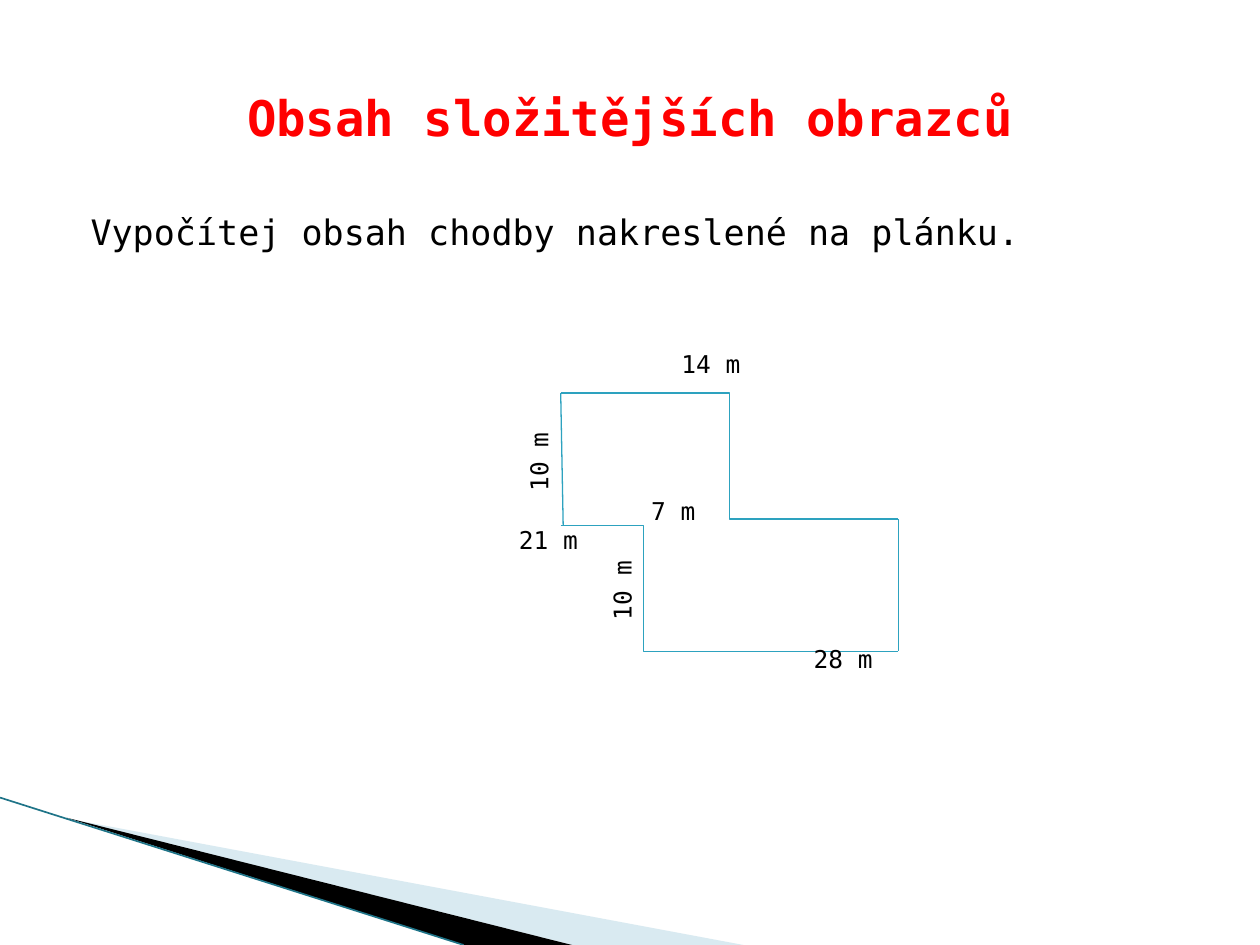
from lxml import etree
from pptx import Presentation
from pptx.dml.color import RGBColor
from pptx.enum.shapes import MSO_CONNECTOR
from pptx.enum.text import MSO_ANCHOR, PP_ALIGN
from pptx.oxml.ns import qn
from pptx.util import Inches, Pt

STRAIGHT, ELBOW = MSO_CONNECTOR.STRAIGHT, MSO_CONNECTOR.ELBOW
FONT = "DejaVu Sans Mono"
COLORS = {
    "title": "FF0000",
    "text": "000000",
    "plan": "2DA2BF",
    "pale": "A0CBDC",
    "dark": "000000",
    "edge": "1F7488",
}

prs = Presentation()
prs.slide_width, prs.slide_height = Inches(10), Inches(7.5)
s = prs.slides.add_slide(prs.slide_layouts[5])


def add_line(kind, x1, y1, x2, y2, color, width):
    c = s.shapes.add_connector(kind, Inches(x1), Inches(y1), Inches(x2), Inches(y2))
    c.line.color.rgb = RGBColor.from_string(COLORS[color])
    c.line.width = Pt(width)
    etree.SubElement(c._element.spPr, qn("a:effectLst"))


def add_run(tf, text, size, color, bold=False):
    r = tf.paragraphs[0].add_run()
    r.text = text
    r.font.name, r.font.size, r.font.bold = FONT, Pt(size), bold
    r.font.color.rgb = RGBColor.from_string(COLORS[color])


wedges = [
    ("pale", 40, [(0.55, 6.5), (5.9, 7.5), (4.54, 7.5)]),
    ("dark", 100, [(0.53, 6.49), (4.54, 7.5), (3.68, 7.5)]),
]
for color, opacity, points in wedges:
    points = [(Inches(x), Inches(y)) for x, y in points]
    fb = s.shapes.build_freeform(*points[0])
    fb.add_line_segments(points[1:], close=True)
    sp = fb.convert_to_shape()
    sp.shadow.inherit = False
    sp.fill.solid()
    sp.fill.fore_color.rgb = RGBColor.from_string(COLORS[color])
    sp.line.fill.background()
    if opacity < 100:
        clr = sp._element.spPr.find(qn("a:solidFill"))[0]
        etree.SubElement(clr, qn("a:alpha"), val=str(opacity * 1000))
add_line(STRAIGHT, 0, 6.33, 3.68, 7.5, "edge", 0.95)

title = s.shapes.title
title.left, title.top = Inches(0.5), Inches(0.3)
title.width, title.height = Inches(9), Inches(1.25)
tf = title.text_frame
tf.vertical_anchor = MSO_ANCHOR.MIDDLE
tf.paragraphs[0].alignment = PP_ALIGN.CENTER
add_run(tf, "Obsah složitějších obrazců", 28, "title", True)

task = s.shapes.add_textbox(Inches(0.62), Inches(1.62), Inches(8.88), Inches(0.5))
task.text_frame.word_wrap = True
add_run(task.text_frame, "Vypočítej obsah chodby nakreslené na plánku.", 20, "text")

walls = [
    (ELBOW, 4.45, 3.12, 7.13, 4.12),
    (STRAIGHT, 4.45, 3.12, 4.47, 4.17),
    (ELBOW, 4.45, 4.17, 5.77, 5.17),
    (STRAIGHT, 5.77, 5.17, 7.13, 5.17),
    (STRAIGHT, 7.13, 4.12, 7.13, 5.17),
]
for wall in walls:
    add_line(*wall, "plan", 0.75)

dimensions = [
    ("14 m", 5.31, 2.72, 0),
    ("7 m", 5.07, 3.89, 0),
    ("21 m", 4.02, 4.12, 0),
    ("28 m", 6.36, 5.06, 0),
    ("10 m", 3.93, 3.48, 270),
    ("10 m", 4.59, 4.5, 270),
]
for text, x, y, rotation in dimensions:
    sp = s.shapes.add_textbox(Inches(x), Inches(y), Inches(0.7), Inches(0.34))
    sp.rotation = rotation
    sp.text_frame.word_wrap = False
    add_run(sp.text_frame, text, 14, "text")

prs.save("out.pptx")
